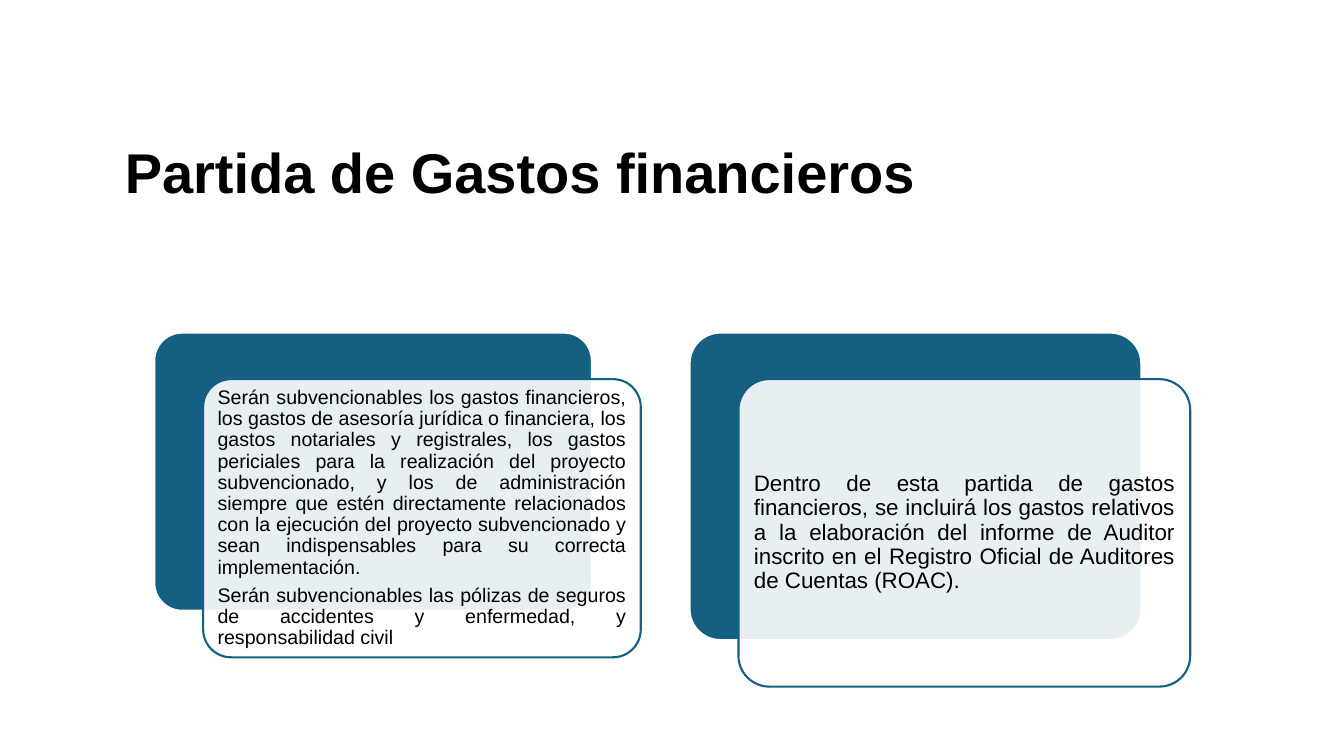
from dataclasses import dataclass

import pptx
import pptx.dml.color
import pptx.enum.shapes
import pptx.enum.text
import pptx.oxml
import pptx.oxml.ns
import pptx.util

BLUE = pptx.dml.color.RGBColor(0x15, 0x60, 0x82)
WHITE = pptx.dml.color.RGBColor(0xFF, 0xFF, 0xFF)
BLACK = pptx.dml.color.RGBColor(0x00, 0x00, 0x00)
FONT = "Arial"

# The slide is a grid of 100 columns by 100 rows
SLIDE_WIDTH = pptx.util.Inches(13.33)
SLIDE_HEIGHT = pptx.util.Inches(7.5)
COLUMN = SLIDE_WIDTH / 100
ROW = SLIDE_HEIGHT / 100


@dataclass(frozen=True)
class Area:
    """Position and size in grid columns and rows."""
    left: float
    top: float
    width: float
    height: float

    def shifted(self, columns: float, rows: float) -> "Area":
        return Area(self.left + columns, self.top + rows, self.width, self.height)

    def inset(self, columns: float, rows: float) -> "Area":
        return Area(self.left + columns, self.top + rows,
                    self.width - 2 * columns, self.height - 2 * rows)

    def lengths(self) -> tuple[int, int, int, int]:
        return (round(self.left * COLUMN), round(self.top * ROW),
                round(self.width * COLUMN), round(self.height * ROW))


@dataclass(frozen=True)
class Card:
    area: Area
    size: int
    margin: float
    paragraphs: tuple[str, ...]


TITLE_AREA = Area(8.55, 11.87, 83.5, 22.67)
FRONT_SHIFT = (3.64, 6.15)
TEXT_INSET = (0.62, 1.13)
CARDS = (
    Card(Area(11.48, 44, 32.56, 36.8), 14, 0.06, (
        "Serán subvencionables los gastos financieros, los gastos de asesoría jurídica "
        "o financiera, los gastos notariales y registrales, los gastos periciales para "
        "la realización del proyecto subvencionado, y los de administración siempre que "
        "estén directamente relacionados con la ejecución del proyecto subvencionado y "
        "sean indispensables para su correcta implementación.",
        "Serán subvencionables las pólizas de seguros de accidentes y enfermedad, y "
        "responsabilidad civil",
    )),
    Card(Area(51.31, 44, 33.61, 40.67), 16, 0.07, (
        "Dentro de esta partida de gastos financieros, se incluirá los gastos relativos "
        "a la elaboración del informe de Auditor inscrito en el Registro Oficial de "
        "Auditores de Cuentas (ROAC).",
    )),
)


def add_panel(page, area: Area, fill, line, opacity: int = 100) -> None:
    panel = page.shapes.add_shape(
        pptx.enum.shapes.MSO_SHAPE.ROUNDED_RECTANGLE, *area.lengths())
    panel.adjustments[0] = 0.1
    panel.shadow.inherit = False
    panel.fill.solid()
    panel.fill.fore_color.rgb = fill
    panel.line.color.rgb = line
    panel.line.width = pptx.util.Pt(1.5)
    if opacity < 100:
        color = panel.fill._xPr.find(".//" + pptx.oxml.ns.qn("a:srgbClr"))
        alpha = pptx.oxml.parse_xml(
            f'<a:alpha {pptx.oxml.ns.nsdecls("a")} val="{opacity * 1000}"/>')
        color.append(alpha)


def add_text(page, area: Area, paragraphs: tuple[str, ...], size: int, margin: float,
             align, bold: bool = False, space_after: float = 0) -> None:
    box = page.shapes.add_textbox(*area.lengths())
    frame = box.text_frame
    frame.word_wrap = True
    frame.vertical_anchor = pptx.enum.text.MSO_ANCHOR.MIDDLE
    frame.margin_left = frame.margin_right = pptx.util.Inches(margin)
    frame.margin_top = frame.margin_bottom = pptx.util.Inches(min(margin, 0.07))
    frame.text = "\n".join(paragraphs)
    for para in frame.paragraphs:
        para.alignment = align
        para.line_spacing = 0.9
        para.space_after = pptx.util.Pt(space_after)
        for span in para.runs:
            span.font.name = FONT
            span.font.size = pptx.util.Pt(size)
            span.font.bold = bold
            span.font.color.rgb = BLACK


def add_card(page, card: Card) -> None:
    front = card.area.shifted(*FRONT_SHIFT)
    add_panel(page, card.area, BLUE, WHITE)
    add_panel(page, front, WHITE, BLUE, opacity=90)
    add_text(page, front.inset(*TEXT_INSET), card.paragraphs, card.size, card.margin,
             pptx.enum.text.PP_ALIGN.JUSTIFY, space_after=round(card.size * 0.35, 1))


def main() -> None:
    deck = pptx.Presentation()
    deck.slide_width = SLIDE_WIDTH
    deck.slide_height = SLIDE_HEIGHT
    page = deck.slides.add_slide(deck.slide_layouts[6])

    # Title
    add_text(page, TITLE_AREA, ("Partida de Gastos financieros",), 40, 0.1,
             pptx.enum.text.PP_ALIGN.LEFT, bold=True)

    # Layered cards
    for card in CARDS:
        add_card(page, card)

    deck.save("out.pptx")


if __name__ == "__main__":
    main()
